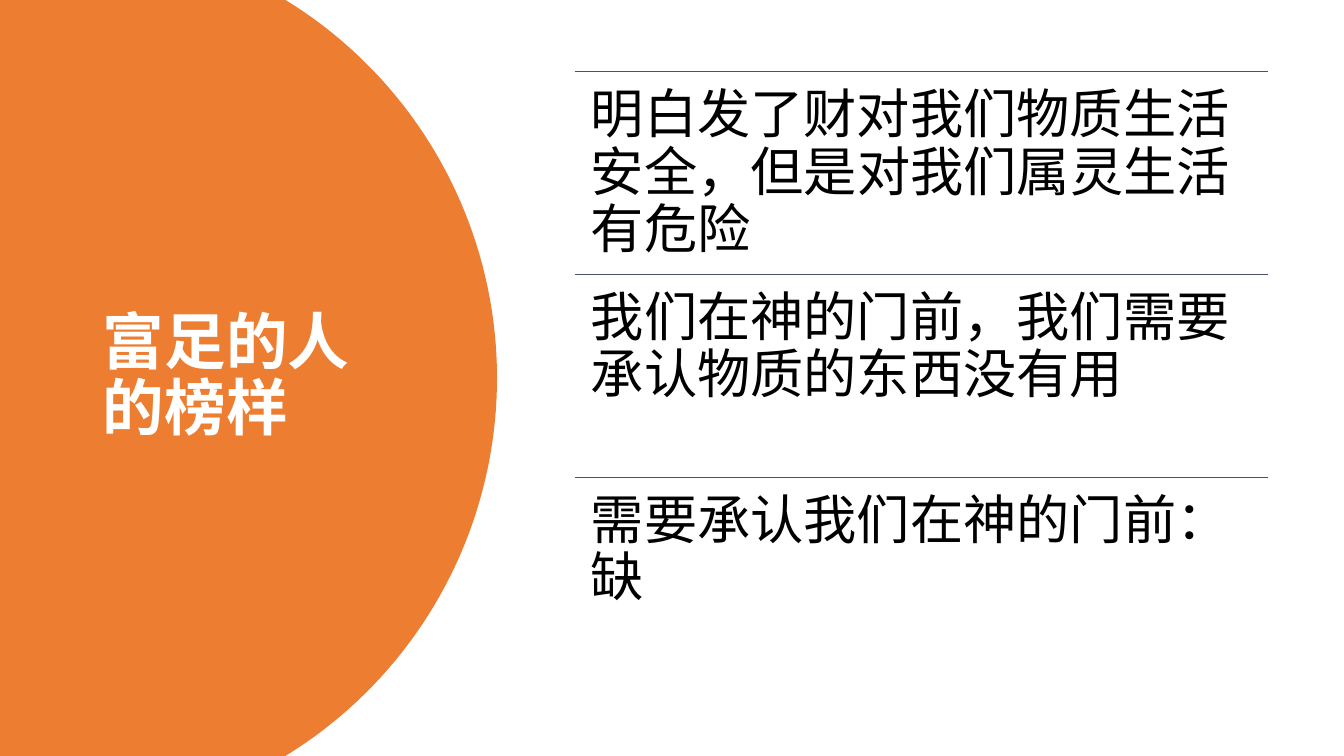
from math import asin, cos, sin

from lxml.etree import SubElement
from pptx import Presentation
from pptx.dml.color import RGBColor
from pptx.enum.shapes import MSO_CONNECTOR
from pptx.enum.text import MSO_ANCHOR, MSO_AUTO_SIZE, PP_ALIGN
from pptx.oxml.ns import qn
from pptx.util import Inches, Pt

ORANGE = RGBColor(0xED, 0x7D, 0x31)
SLATE = RGBColor(0x44, 0x54, 0x6A)
WHITE = RGBColor(0xFF, 0xFF, 0xFF)
BLACK = RGBColor(0, 0, 0)

TITLE = "富足的人的榜样"
POINTS = [
    [("明白发了财对我们物质生活安全，", "Noto Sans CJK SC"),
     ("但是对我们属灵生活有危险", "Arial")],
    [("我们在神的门前，我们需要承认物质的东西没有用", "Calibri")],
    [("需要承认我们在神的门前：缺", "Calibri")],
]


def add_disc(slide, left, top, width, height):
    radius = width * 0.8925
    half = height / 2
    hub = left + width - radius
    sweep = asin(half / radius)
    steps = 80
    angles = [sweep * (2 * i / steps - 1) for i in range(steps + 1)]
    arc = [(round(hub + radius * cos(a)), round(top + half + radius * sin(a)))
           for a in angles]
    pen = slide.shapes.build_freeform(left, top, scale=1.0)
    pen.add_line_segments(arc + [(left, top + height)], close=True)
    disc = pen.convert_to_shape()
    disc.shadow.inherit = False
    disc.fill.solid()
    disc.fill.fore_color.rgb = ORANGE
    disc.line.fill.background()


def set_title(slide, left, top, width, height):
    title = slide.shapes.title
    slide.shapes._spTree.append(title._element)
    title.left, title.top, title.width, title.height = left, top, width, height
    frame = title.text_frame
    frame.text = TITLE
    frame.word_wrap = True
    frame.auto_size = MSO_AUTO_SIZE.NONE
    frame.vertical_anchor = MSO_ANCHOR.MIDDLE
    line = frame.paragraphs[0]
    line.alignment = PP_ALIGN.LEFT
    line.line_spacing = 0.9
    line.font.name = "Calibri"
    line.font.size = Pt(44)
    line.font.bold = True
    line.font.color.rgb = WHITE


def add_rule(shapes, left, top, width):
    rule = shapes.add_connector(
        MSO_CONNECTOR.STRAIGHT, left, top, left + width, top)
    rule.line.color.rgb = SLATE
    rule.line.width = Pt(1)
    SubElement(rule._element.spPr, qn("a:effectLst"))


def add_point(shapes, runs, left, top, width, height):
    frame = shapes.add_textbox(left, top, width, height).text_frame
    frame.word_wrap = True
    frame.margin_left = frame.margin_right = Inches(0.16)
    frame.margin_top = frame.margin_bottom = Inches(0.16)
    line = frame.paragraphs[0]
    line.line_spacing = 0.9
    line.font.size = Pt(38)
    line.font.color.rgb = BLACK
    for text, face in runs:
        run = line.add_run()
        run.text = text
        run.font.name = face


def add_list(slide, left, top, width, height):
    shapes = slide.shapes.add_group_shape().shapes
    row = height // len(POINTS)
    for i, runs in enumerate(POINTS):
        y = top + i * row
        add_rule(shapes, left, y, width)
        add_point(shapes, runs, left, y, width, row)


def main():
    deck = Presentation()
    deck.slide_width, deck.slide_height = Inches(13.33), Inches(7.5)
    slide = deck.slides.add_slide(deck.slide_layouts[5])
    add_disc(slide, 0, 0, Inches(4.93), deck.slide_height)
    set_title(slide, Inches(0.92), Inches(0.7), Inches(3.23), Inches(6.09))
    add_list(slide, Inches(5.7), Inches(0.71), Inches(6.88), Inches(6.04))
    deck.save("out.pptx")


if __name__ == "__main__":
    main()
